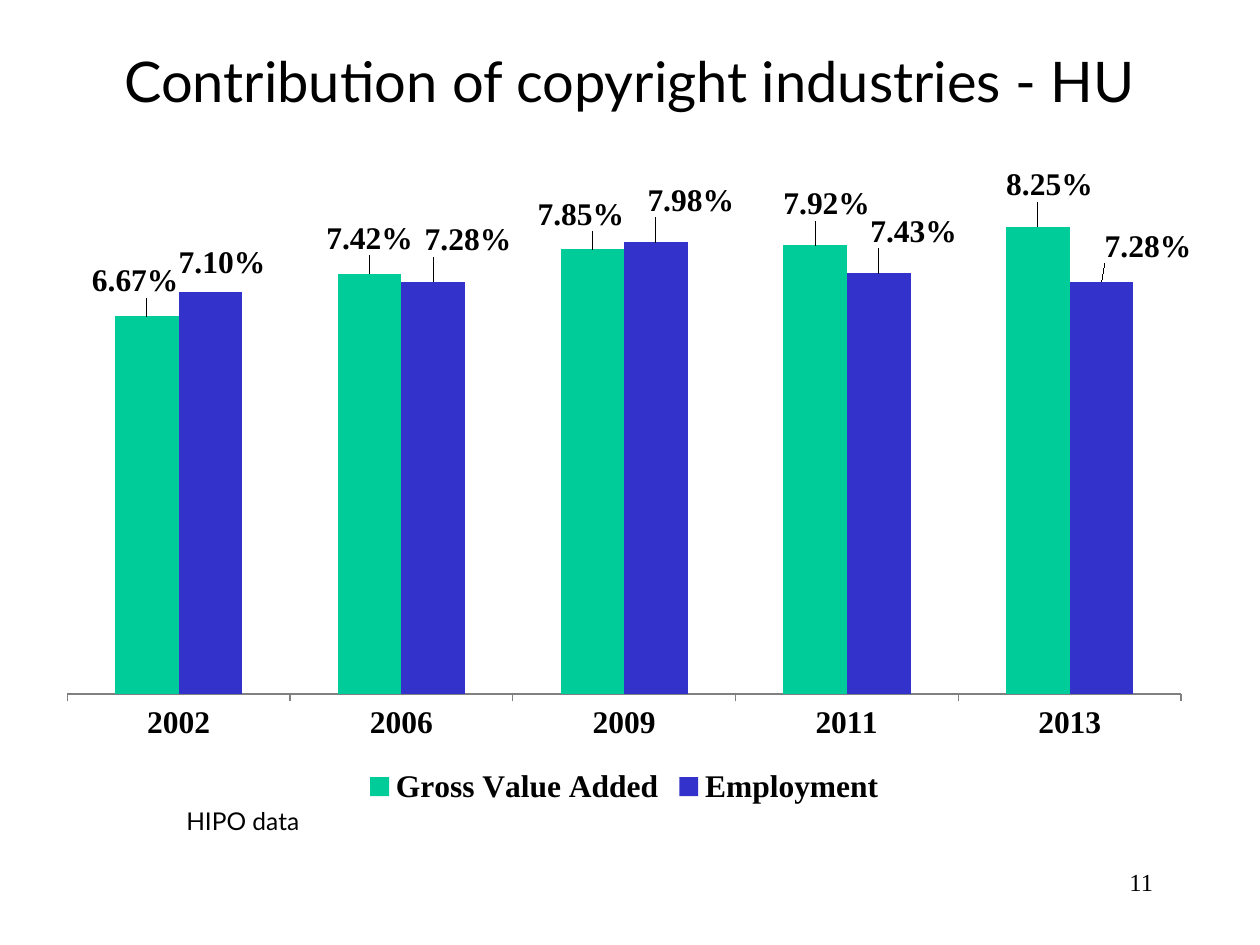
"""Build a slide charting the contribution of copyright industries in Hungary."""
import lxml.etree
import pptx
import pptx.chart.data
import pptx.dml.color
import pptx.enum.chart
import pptx.enum.text
import pptx.oxml.ns
import pptx.util

Inches = pptx.util.Inches
Pt = pptx.util.Pt
RGBColor = pptx.dml.color.RGBColor
Align = pptx.enum.text.PP_ALIGN
Anchor = pptx.enum.text.MSO_ANCHOR
qn = pptx.oxml.ns.qn

BLACK = RGBColor(0x00, 0x00, 0x00)
GRAY = RGBColor(0x80, 0x80, 0x80)
GREEN = RGBColor(0x00, 0xCC, 0x99)
BLUE = RGBColor(0x33, 0x33, 0xCC)

YEARS = ["2002", "2006", "2009", "2011", "2013"]
SERIES = [
    {
        "name": "Gross Value Added",
        "color": GREEN,
        "values": [0.0667, 0.0742, 0.0785, 0.0792, 0.0825],
        "shifts": [(-0.01, -0.02), (0, -0.02), (-0.01, -0.02), (0.01, -0.03), (0.01, -0.03)],
    },
    {
        "name": "Employment",
        "color": BLUE,
        "values": [0.071, 0.0728, 0.0798, 0.0743, 0.0728],
        "shifts": [(0.01, -0.01), (0.03, -0.03), (0.03, -0.03), (0.03, -0.03), (0.04, -0.02)],
    },
]
PERCENT = "0.00%"


def apply(target, values):
    for name, value in values.items():
        setattr(target, name, value)


def make_layout(values):
    layout = lxml.etree.Element(qn("c:layout"))
    manual = lxml.etree.SubElement(layout, qn("c:manualLayout"))
    for name, value in values.items():
        lxml.etree.SubElement(manual, qn(f"c:{name}")).set("val", str(value))
    return layout


class Slide:
    heading_font = "Lato"
    body_font = "Times New Roman"
    chart_text = {"name": body_font, "size": Pt(18), "bold": True}

    def __init__(self, deck):
        self.page = deck.slides.add_slide(deck.slide_layouts[6])

    def style_font(self, font, values):
        apply(font, values)
        font.color.rgb = BLACK

    def text(self, words, place, size, name, align=Align.LEFT, anchor=Anchor.TOP):
        box = self.page.shapes.add_textbox(*map(Inches, place))
        apply(box.text_frame, {"word_wrap": True, "vertical_anchor": anchor})
        para = box.text_frame.paragraphs[0]
        para.alignment = align
        span = para.add_run()
        span.text = words
        self.style_font(span.font, {"name": name, "size": Pt(size)})

    def column_chart(self, place, categories, series_list):
        data = pptx.chart.data.CategoryChartData(number_format=PERCENT)
        data.categories = categories
        for entry in series_list:
            data.add_series(entry["name"], entry["values"])
        kind = pptx.enum.chart.XL_CHART_TYPE.COLUMN_CLUSTERED
        chart = self.page.shapes.add_chart(kind, *map(Inches, place), data).chart
        apply(chart, {"has_title": False, "has_legend": True})
        self.style_font(chart.font, {"name": self.body_font, "size": Pt(10)})
        apply(chart.legend, {
            "position": pptx.enum.chart.XL_LEGEND_POSITION.BOTTOM,
            "include_in_layout": False,
        })
        self.style_font(chart.legend.font, self.chart_text)
        self.style_axes(chart)
        plot = chart.plots[0]
        apply(plot, {"gap_width": 150, "overlap": 0, "vary_by_categories": False})
        for series, entry in zip(plot.series, series_list):
            self.style_series(series, entry)

    def style_axes(self, chart):
        apply(chart.value_axis, {
            "visible": False,
            "has_major_gridlines": False,
            "minimum_scale": 0,
            "maximum_scale": 0.09,
        })
        axis = chart.category_axis
        axis.major_tick_mark = pptx.enum.chart.XL_TICK_MARK.OUTSIDE
        axis.format.line.color.rgb = GRAY
        self.style_font(axis.tick_labels.font, self.chart_text)
        area = chart.element.find(".//" + qn("c:plotArea"))
        for old in area.findall(qn("c:layout")):
            area.remove(old)
        area.insert(0, make_layout({
            "layoutTarget": "inner", "xMode": "edge", "yMode": "edge",
            "x": 0.02, "y": 0.03, "w": 0.96, "h": 0.79,
        }))

    def style_series(self, series, entry):
        series.format.fill.solid()
        series.format.fill.fore_color.rgb = entry["color"]
        position = pptx.enum.chart.XL_LABEL_POSITION.OUTSIDE_END
        apply(series.data_labels, {
            "show_value": True,
            "number_format": PERCENT,
            "number_format_is_linked": False,
            "position": position,
        })
        self.style_font(series.data_labels.font, self.chart_text)
        for index in range(len(entry["shifts"])):
            label = series.points[index].data_label
            self.style_font(label.font, self.chart_text)
            label.position = position
        labels = series.data_labels._element.findall(qn("c:dLbl"))
        for label, (x, y) in zip(labels, entry["shifts"]):
            label.insert(1, make_layout({"x": x, "y": y}))


def main():
    deck = pptx.Presentation()
    apply(deck, {"slide_width": Inches(10), "slide_height": Inches(7.5)})
    slide = Slide(deck)
    slide.column_chart((0.35, 1.31, 9.21, 5.12), YEARS, SERIES)
    slide.text("Contribution of copyright industries - HU", (0.75, 0.36, 8.5, 0.56),
               32, slide.heading_font, Align.CENTER, Anchor.MIDDLE)
    slide.text("11", (7.17, 6.83, 2.08, 0.5), 14, slide.body_font, Align.RIGHT)
    slide.text("HIPO data", (1.38, 6.35, 2.28, 0.34), 14, slide.heading_font)
    deck.save("out.pptx")


if __name__ == "__main__":
    main()
